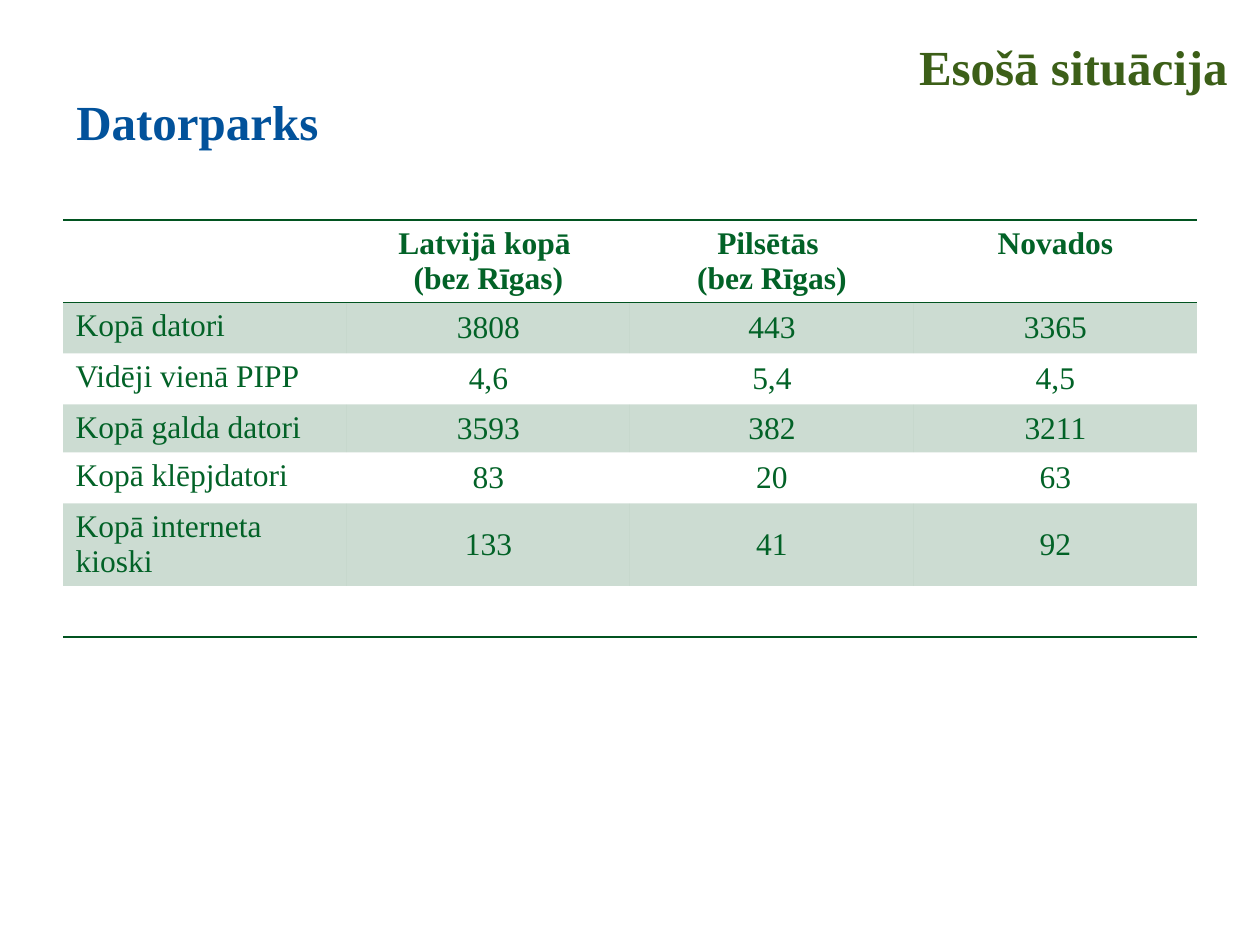
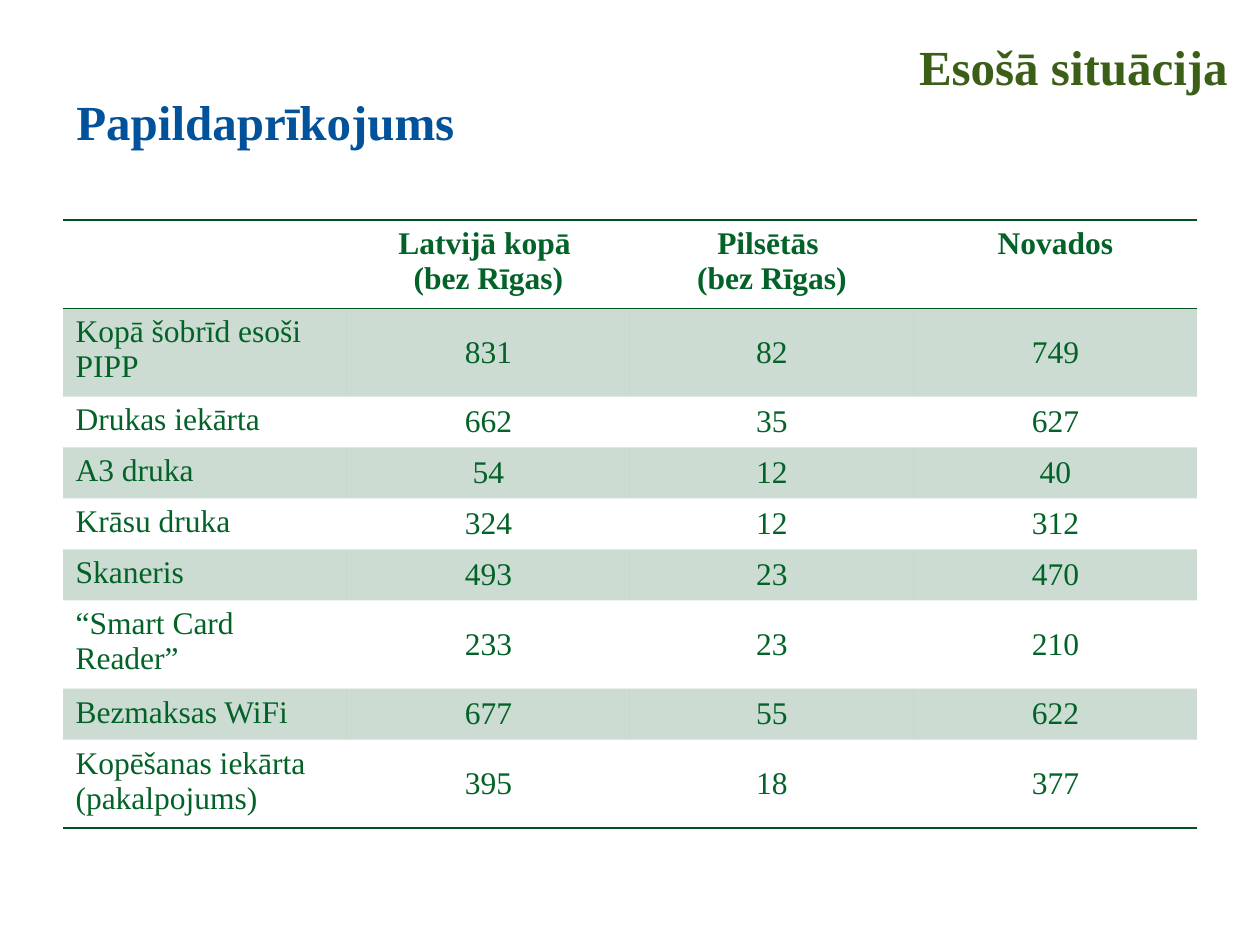
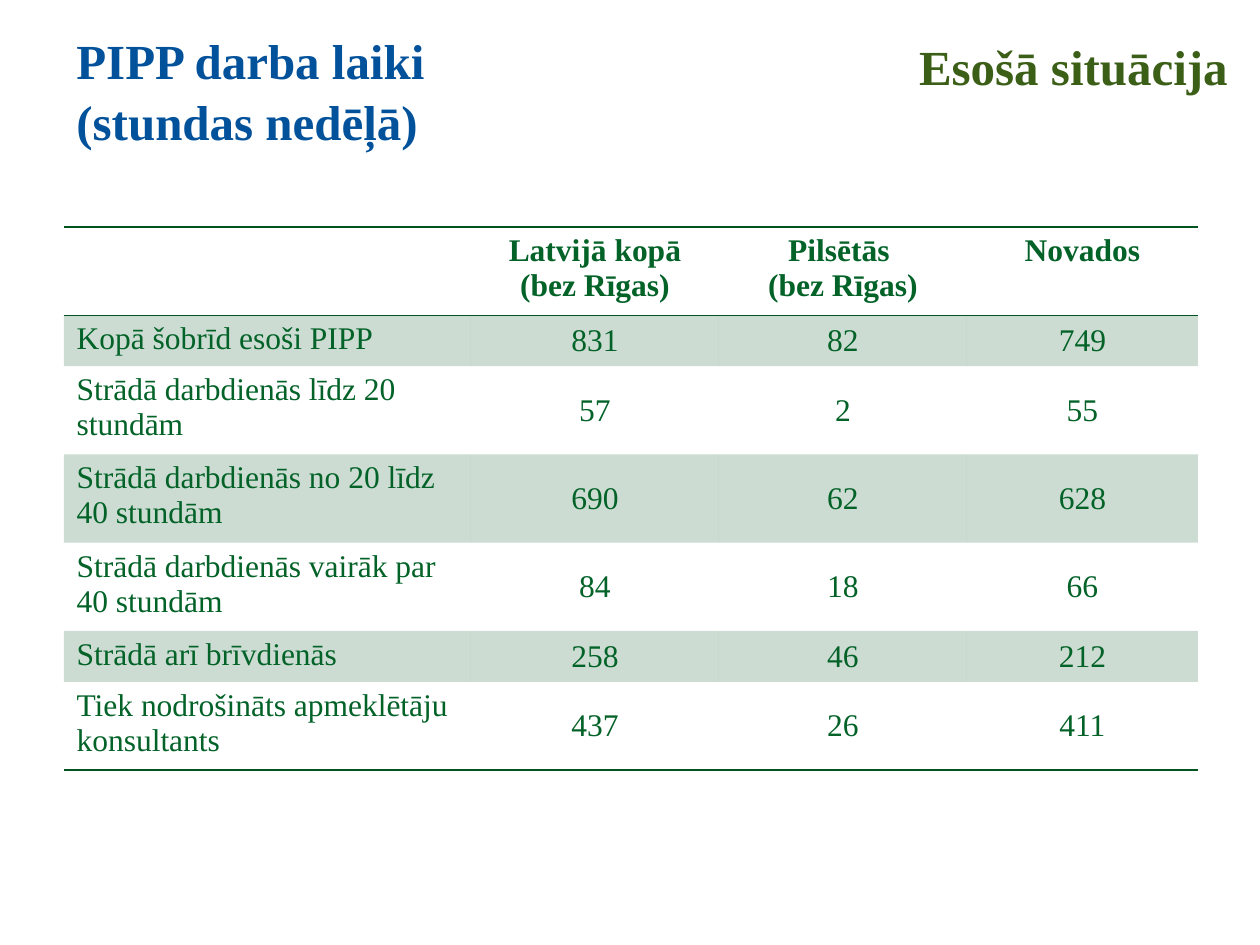
from dataclasses import dataclass

from lxml.etree import SubElement
from pptx import Presentation
from pptx.dml.color import RGBColor
from pptx.enum.text import MSO_ANCHOR, PP_ALIGN
from pptx.oxml.ns import qn
from pptx.util import Emu, Pt

FONT = "Times New Roman"
TOPIC_BLUE = "02529B"
SECTION_GREEN = "3C5F18"
TABLE_TEXT = "026227"
TABLE_GREEN = "015320"
BAND_ALPHA = 20000
NO_GRID_STYLE = "{2D5ABB26-0587-4C30-8999-92F81FD0307C}"

ONE_LINE = 51
TWO_LINES = 82
SECTION = "Esošā situācija"
REGIONS = ("", "Latvijā kopā \n(bez Rīgas)", "Pilsētās \n(bez Rīgas)", "Novados")


@dataclass(frozen=True)
class Row:
    label: str
    values: tuple[str, ...]
    height: int = ONE_LINE


@dataclass(frozen=True)
class Topic:
    title: str
    rows: tuple[Row, ...]
    header: tuple[str, ...] = REGIONS
    left: int = 63
    top: int = 220
    columns: tuple[int, ...] = (284, 283, 284, 283)


TOPICS = (
    Topic("Datorparks", (
        Row("Kopā datori", ("3808", "443", "3365")),
        Row("Vidēji vienā PIPP", ("4,6", "5,4", "4,5")),
        Row("Kopā galda datori", ("3593", "382", "3211"), 48),
        Row("Kopā klēpjdatori", ("83", "20", "63")),
        Row("Kopā interneta kioski", ("133", "41", "92"), TWO_LINES),
        Row("", ("", "", "")),
    )),
    Topic("Papildaprīkojums", (
        Row("Kopā šobrīd esoši PIPP", ("831", "82", "749"), TWO_LINES),
        Row("Drukas iekārta", ("662", "35", "627")),
        Row("A3 druka", ("54", "12", "40")),
        Row("Krāsu druka", ("324", "12", "312")),
        Row("Skaneris", ("493", "23", "470")),
        Row("“Smart Card Reader”", ("233", "23", "210"), TWO_LINES),
        Row("Bezmaksas WiFi", ("677", "55", "622")),
        Row("Kopēšanas iekārta (pakalpojums)", ("395", "18", "377"), TWO_LINES),
    )),
    Topic("PIPP darba laiki (stundas nedēļā)", (
        Row("Kopā šobrīd esoši PIPP", ("831", "82", "749")),
        Row("Strādā darbdienās līdz 20 stundām", ("57", "2", "55"), TWO_LINES),
        Row("Strādā darbdienās no 20 līdz 40 stundām", ("690", "62", "628"), TWO_LINES),
        Row("Strādā darbdienās vairāk par 40 stundām", ("84", "18", "66"), TWO_LINES),
        Row("Strādā arī brīvdienās", ("258", "46", "212")),
        Row("Tiek nodrošināts apmeklētāju konsultants", ("437", "26", "411"), TWO_LINES),
    ), header=("", "Latvijā kopā (bez Rīgas)", *REGIONS[2:]),
        left=64, top=227, columns=(407, 248, 248, 231)),
)


def px(length: int) -> Emu:
    """Convert pixels at 126 to the inch into EMU."""
    return Emu(round(length * 914400 / 126))


def rgb(value: str) -> RGBColor:
    return RGBColor.from_string(value)


def write(frame, text: str, *, size: int, color: str, bold: bool = False,
          align=PP_ALIGN.LEFT, spacing: float | None = None) -> None:
    """Fill a text frame, one paragraph for each line of text."""
    for index, line in enumerate(text.split("\n")):
        paragraph = frame.add_paragraph() if index else frame.paragraphs[0]
        paragraph.alignment = align
        paragraph.line_spacing = spacing
        if line:
            run = paragraph.add_run()
            run.text = line
            run.font.name = FONT
            run.font.size = Pt(size)
            run.font.bold = bold
            run.font.color.rgb = rgb(color)


def add_heading(slide, text: str, left: int, top: int, width: int, *, color: str,
                anchor=MSO_ANCHOR.TOP, align=PP_ALIGN.LEFT, spacing: float) -> None:
    frame = slide.shapes.add_textbox(px(left), px(top), px(width), px(141)).text_frame
    frame.word_wrap = True
    frame.vertical_anchor = anchor
    write(frame, text, size=28, color=color, bold=True, align=align, spacing=spacing)


def add_border(cell, side: str) -> None:
    line = SubElement(cell._tc.get_or_add_tcPr(), qn(f"a:{side}"), w=str(Pt(1)))
    fill = SubElement(line, qn("a:solidFill"))
    SubElement(fill, qn("a:srgbClr"), val=TABLE_GREEN)


def fill_cell(cell, banded: bool) -> None:
    if not banded:
        cell.fill.background()
        return
    cell.fill.solid()
    cell.fill.fore_color.rgb = rgb(TABLE_GREEN)
    tint = cell._tc.tcPr.find(f"{qn('a:solidFill')}/{qn('a:srgbClr')}")
    SubElement(tint, qn("a:alpha"), val=str(BAND_ALPHA))


def add_topic_table(slide, topic: Topic) -> None:
    heights = [TWO_LINES] + [row.height for row in topic.rows]
    lines = [topic.header] + [(row.label, *row.values) for row in topic.rows]
    table = slide.shapes.add_table(
        len(lines), len(topic.columns), px(topic.left), px(topic.top),
        px(sum(topic.columns)), px(sum(heights))).table
    table.first_row = table.horz_banding = False
    table._tbl.tblPr.find(qn("a:tableStyleId")).text = NO_GRID_STYLE
    for column, width in zip(table.columns, topic.columns):
        column.width = px(width)
    for row_index, (height, texts) in enumerate(zip(heights, lines)):
        table.rows[row_index].height = px(height)
        is_header = row_index == 0
        for column_index, text in enumerate(texts):
            cell = table.cell(row_index, column_index)
            is_value = column_index > 0
            write(cell.text_frame, text, size=18, color=TABLE_TEXT, bold=is_header,
                  align=PP_ALIGN.CENTER if is_value else PP_ALIGN.LEFT)
            if is_value and not is_header:
                cell.vertical_anchor = MSO_ANCHOR.MIDDLE
            if is_header:
                add_border(cell, "lnT")
            if is_header or row_index == len(lines) - 1:
                add_border(cell, "lnB")
            fill_cell(cell, banded=row_index % 2 == 1)


def main() -> None:
    deck = Presentation()
    deck.slide_width, deck.slide_height = px(1260), px(945)
    for topic in TOPICS:
        slide = deck.slides.add_slide(deck.slide_layouts[6])
        add_topic_table(slide, topic)
        add_heading(slide, topic.title, 64, 16, 546, color=TOPIC_BLUE,
                    anchor=MSO_ANCHOR.BOTTOM, spacing=1.05)
        add_heading(slide, SECTION, 699, 24, 541, color=SECTION_GREEN,
                    align=PP_ALIGN.RIGHT, spacing=1.1)
    deck.save("out.pptx")


if __name__ == "__main__":
    main()
